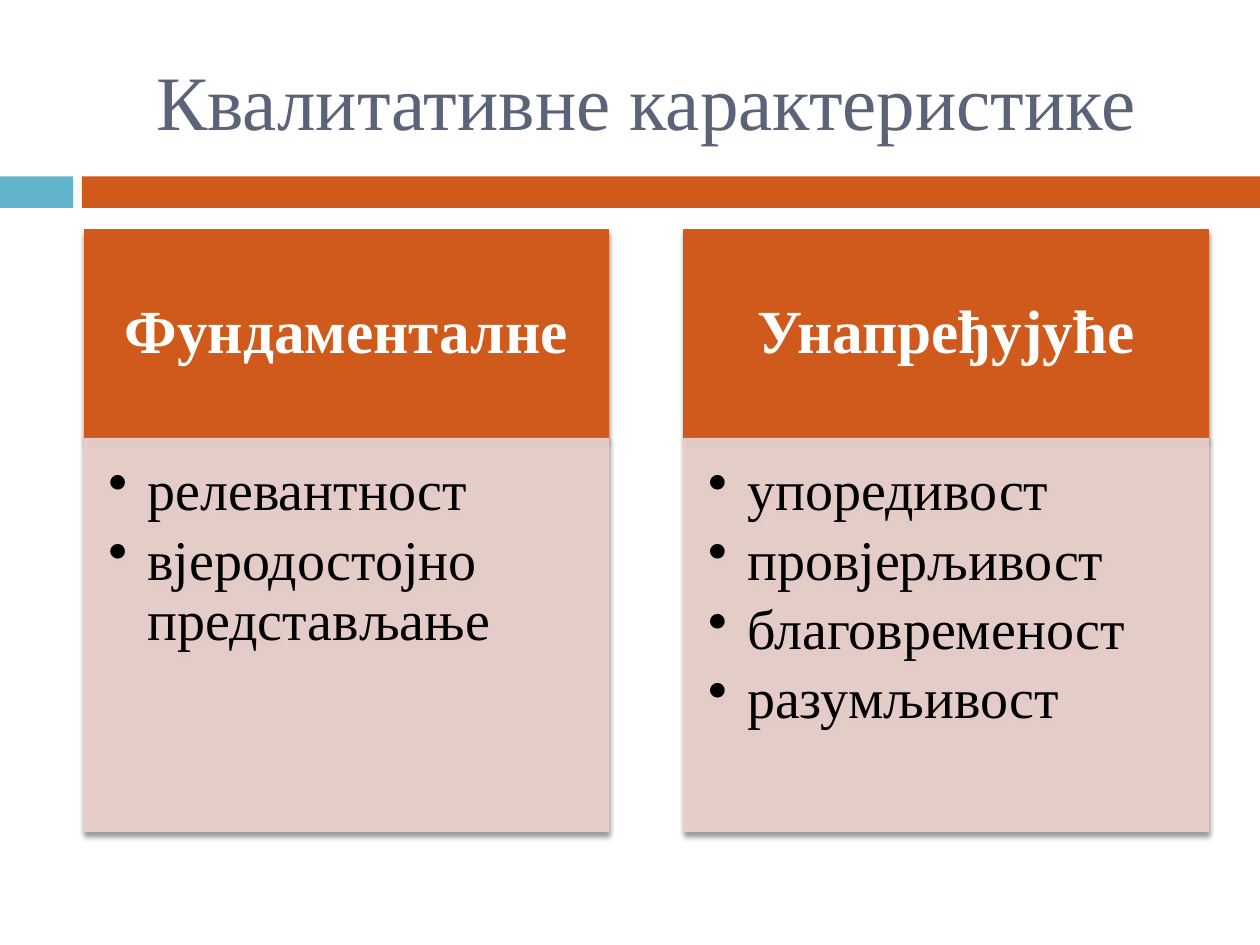
from lxml import etree
from pptx import Presentation
from pptx.dml.color import RGBColor
from pptx.enum.shapes import MSO_SHAPE
from pptx.enum.text import MSO_ANCHOR, PP_ALIGN
from pptx.oxml.ns import qn
from pptx.util import Inches, Pt

RECT = MSO_SHAPE.RECTANGLE
TOP, MIDDLE = MSO_ANCHOR.TOP, MSO_ANCHOR.MIDDLE
LEFT, CENTER = PP_ALIGN.LEFT, PP_ALIGN.CENTER

ORANGE = RGBColor(0xCF, 0x5A, 0x1B)
BLUE = RGBColor(0x60, 0xB5, 0xCC)
PINK = RGBColor(0xED, 0xD2, 0xCD)
SLATE = RGBColor(0x5A, 0x63, 0x78)
WHITE = RGBColor(0xFF, 0xFF, 0xFF)
BLACK = RGBColor(0, 0, 0)

COLUMNS = [
    ("Фундаменталне", ["релевантност", "вјеродостојно представљање"]),
    ("Унапређујуће", ["упоредивост", "провјерљивост", "благовременост", "рaзумљивост"]),
]
COLUMN_LEFT, COLUMN_PITCH, COLUMN_WIDTH = 0.67, 4.76, 4.16
HEADER_TOP, HEADER_HEIGHT, LIST_HEIGHT = 1.82, 1.66, 3.12


def add_child(parent, tag, **attributes):
    child = etree.SubElement(parent, qn(tag))
    for name, value in attributes.items():
        child.set(name, str(value))
    return child


def write_text(frame, lines, size, color, bold=False, align=LEFT, anchor=TOP,
               margins=(0.1, 0.05, 0.1, 0.05), spacing=None, after=0, bullet=False):
    """Fill a text frame, one paragraph per line."""
    frame.word_wrap = True
    frame.vertical_anchor = anchor
    (frame.margin_left, frame.margin_top,
     frame.margin_right, frame.margin_bottom) = map(Inches, margins)
    for index, line in enumerate(lines):
        paragraph = frame.add_paragraph() if index else frame.paragraphs[0]
        paragraph.text = line
        paragraph.alignment = align
        paragraph.line_spacing = spacing
        paragraph.space_before = Pt(0)
        paragraph.space_after = Pt(after)
        if bullet:
            paragraph.level = 1
            properties = paragraph._p.get_or_add_pPr()
            properties.set("marL", str(Inches(0.31)))
            properties.set("indent", str(-Inches(0.31)))
            add_child(properties, "a:buChar", char="•")
        font = paragraph.runs[0].font
        font.name, font.size, font.bold = "Times New Roman", Pt(size), bold
        font.color.rgb = color


class SlideBuilder:
    def __init__(self, slide):
        self.slide = slide

    def title(self, text):
        title = self.slide.shapes.title
        title.left, title.top = Inches(0.67), Inches(0.25)
        title.width, title.height = Inches(8.92), Inches(1.08)
        write_text(title.text_frame, [text], 44, SLATE, align=CENTER, anchor=MIDDLE)

    def bar(self, left, top, width, height, color):
        bar = self.slide.shapes.add_shape(
            RECT, Inches(left), Inches(top), Inches(width), Inches(height))
        bar.fill.solid()
        bar.fill.fore_color.rgb = color
        bar.line.fill.background()
        bar.shadow.inherit = False
        return bar

    def panel(self, left, top, width, height, color, opacity=100):
        """Outlined block with a soft shadow below it."""
        panel = self.bar(left, top, width, height, color)
        panel.line.color.rgb = color
        panel.line.width = Pt(0.79)
        properties = panel._element.spPr
        if opacity < 100:
            for color_element in list(properties.iter(qn("a:srgbClr"))):
                add_child(color_element, "a:alpha", val=opacity * 1000)
        shadow = add_child(properties.find(qn("a:effectLst")), "a:outerShdw",
                           blurRad=Pt(3), dist=Pt(2.4), dir=90 * 60000,
                           rotWithShape=0)
        shadow_color = add_child(shadow, "a:srgbClr", val=BLACK)
        add_child(shadow_color, "a:alpha", val=45000)
        return panel

    def column(self, left, heading, items):
        header = self.panel(left, HEADER_TOP, COLUMN_WIDTH, HEADER_HEIGHT, ORANGE)
        write_text(header.text_frame, [heading], 35, WHITE, bold=True, align=CENTER,
                   anchor=MIDDLE, margins=(0.27, 0.16, 0.27, 0.16), spacing=0.9)
        body = self.panel(left, HEADER_TOP + HEADER_HEIGHT, COLUMN_WIDTH,
                          LIST_HEIGHT, PINK, opacity=90)
        write_text(body.text_frame, items, 32, BLACK, spacing=0.9, after=5,
                   margins=(0.19, 0.19, 0.25, 0.28), bullet=True)


def main():
    deck = Presentation()
    deck.slide_width, deck.slide_height = Inches(10), Inches(7.5)
    builder = SlideBuilder(deck.slides.add_slide(deck.slide_layouts[5]))

    # Title and the divider under it
    builder.title("Квалитативне карактеристике")
    builder.bar(0, 1.4, 0.58, 0.25, BLUE)
    builder.bar(0.65, 1.4, 9.35, 0.25, ORANGE)

    # Two groups of characteristics
    for index, (heading, items) in enumerate(COLUMNS):
        builder.column(COLUMN_LEFT + index * COLUMN_PITCH, heading, items)

    deck.save("out.pptx")


if __name__ == "__main__":
    main()
